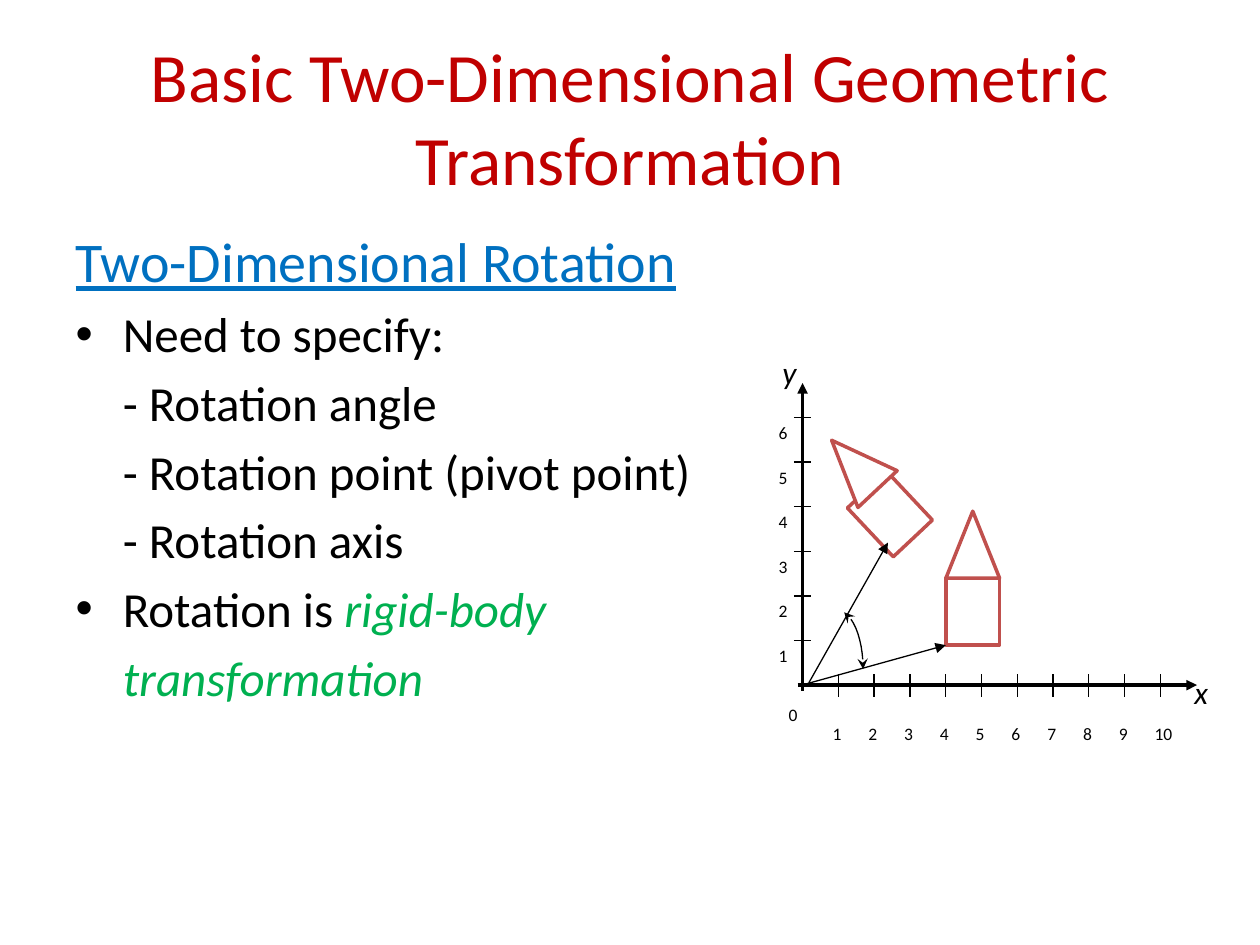
import pptx
import pptx.dml.color
import pptx.enum.shapes
import pptx.enum.text
import pptx.oxml.ns
import pptx.util
import lxml.etree

Pt = pptx.util.Pt
qn = pptx.oxml.ns.qn
Shape = pptx.enum.shapes.MSO_SHAPE
AutoSize = pptx.enum.text.MSO_AUTO_SIZE
Anchor = pptx.enum.text.MSO_ANCHOR
Align = pptx.enum.text.PP_ALIGN

COLORS = {"title": "C00000", "heading": "0070C0", "text": "000000",
          "accent": "00B050", "house": "C0504D", "paper": "FFFFFF"}
FORMATS = {
    "title": {"size": Pt(39.6), "color": "title"},
    "heading": {"size": Pt(32), "underline": True, "color": "heading"},
    "body": {"size": Pt(28), "color": "text"},
    "accent": {"size": Pt(28), "italic": True, "color": "accent"},
    "axis": {"size": Pt(18), "italic": True, "color": "text"},
    "number": {"size": Pt(10), "color": "text"},
}
# Each paragraph: bulleted or not, then its runs
BODY = [
    (False, [("Two-Dimensional Rotation", "heading")]),
    (True, [("Need to specify:", "body")]),
    (False, [("\t- Rotation angle", "body")]),
    (False, [("\t- Rotation point (pivot point)", "body")]),
    (False, [("\t- Rotation axis", "body")]),
    (True, [("Rotation is ", "body"), ("rigid-body", "accent")]),
    (False, [("\ttransformation", "accent")]),
]
ORIGIN_X, ORIGIN_Y = 458.6, 391.5
STEP_X, STEP_Y = 20.45, 25.5
HOUSE_WIDTH, HOUSE_HEIGHT = 30.7, 38.3


def rgb(name):
    return pptx.dml.color.RGBColor.from_string(COLORS[name])


def add_run(paragraph, text, style):
    run = paragraph.add_run()
    run.text = text
    run.font.name = "Calibri"
    for key, value in FORMATS[style].items():
        if key == "color":
            run.font.color.rgb = rgb(value)
        else:
            setattr(run.font, key, value)


def place(shape, left, top, width, height):
    box = {"left": left, "top": top, "width": width, "height": height}
    for key, value in box.items():
        setattr(shape, key, Pt(value))


def format_line(shape, color, width, **ends):
    shape.line.color.rgb = rgb(color)
    shape.line.width = Pt(width)
    line = shape.element.spPr.find(qn("a:ln"))
    for end, kind in ends.items():
        lxml.etree.SubElement(line, qn("a:" + end), type=kind)


def add_line(group, start, finish, width=0.75, **ends):
    points = [Pt(value) for value in (*start, *finish)]
    connector = group.shapes.add_connector(
        pptx.enum.shapes.MSO_CONNECTOR.STRAIGHT, *points)
    format_line(connector, "text", width, **ends)
    lxml.etree.SubElement(connector.element.spPr, qn("a:effectLst"))


def add_white_shape(group, kind, left, top, width, height):
    shape = group.shapes.add_shape(
        kind, *[Pt(value) for value in (left, top, width, height)])
    shape.shadow.inherit = False
    shape.fill.solid()
    shape.fill.fore_color.rgb = rgb("paper")
    return shape


def add_house_part(group, kind, left, top, rotation=0):
    part = add_white_shape(group, kind, left, top, HOUSE_WIDTH, HOUSE_HEIGHT)
    part.rotation = rotation
    format_line(part, "house", 2)


def add_axis_name(group, name, left, top):
    box = add_white_shape(group, Shape.RECTANGLE, left, top, 20, 33)
    box.line.fill.background()
    box.text_frame.vertical_anchor = Anchor.TOP
    paragraph = box.text_frame.paragraphs[0]
    paragraph.alignment = Align.LEFT
    add_run(paragraph, name, "axis")


def add_number(group, number, left, top):
    width = 25.2 if number > 9 else 20.2
    box = group.shapes.add_textbox(Pt(left), Pt(top), Pt(width), Pt(22.3))
    box.text_frame.word_wrap = False
    box.text_frame.auto_size = AutoSize.SHAPE_TO_FIT_TEXT
    add_run(box.text_frame.paragraphs[0], f" {number}", "number")


def add_angle_arc(group, curve, segments=10):
    points = []
    for step in range(segments + 1):
        t = step / segments
        weights = ((1 - t) ** 3, 3 * t * (1 - t) ** 2, 3 * t * t * (1 - t), t ** 3)
        points.append(tuple(
            Pt(sum(weight * point[axis] for weight, point in zip(weights, curve)))
            for axis in (0, 1)))
    builder = group.shapes.build_freeform(*points[0])
    builder.add_line_segments(points[1:], close=False)
    arc = builder.convert_to_shape()
    arc.shadow.inherit = False
    arc.fill.background()
    format_line(arc, "text", 0.75, headEnd="stealth", tailEnd="stealth")


def add_title(slide):
    title = slide.shapes.title
    place(title, 36, 21.6, 648, 90)
    frame = title.text_frame
    frame.auto_size = AutoSize.NONE
    frame.vertical_anchor = Anchor.MIDDLE
    frame.paragraphs[0].alignment = Align.CENTER
    add_run(frame.paragraphs[0],
            "Basic Two-Dimensional Geometric Transformation", "title")


def add_body(slide):
    body = slide.placeholders[1]
    place(body, 36, 126, 648, 396)
    frame = body.text_frame
    frame.auto_size = AutoSize.NONE
    for index, (bulleted, runs) in enumerate(BODY):
        paragraph = frame.add_paragraph() if index else frame.paragraphs[0]
        for text, style in runs:
            add_run(paragraph, text, style)
        if not bulleted:
            properties = paragraph._p.get_or_add_pPr()
            properties.set("marL", str(Pt(27)))
            properties.set("indent", str(-Pt(27)))
            lxml.etree.SubElement(properties, qn("a:buNone"))


def add_axes(group):
    add_axis_name(group, "y", 440, 198)
    add_axis_name(group, "x", 675.4, 381)
    add_line(group, (ORIGIN_X, 394.6), (ORIGIN_X, 218.9), 2, tailEnd="triangle")
    add_line(group, (455.8, ORIGIN_Y), (684, ORIGIN_Y), 2, tailEnd="triangle")
    add_number(group, 0, 443.5, 386.6)
    for number in range(1, 11):
        x = ORIGIN_X + number * STEP_X
        add_line(group, (x, 385.2), (x, 398.2))
        add_number(group, number, x - 10.4, 397.4)
    for number in range(1, 7):
        y = ORIGIN_Y - number * STEP_Y
        add_line(group, (453.6, y), (463.7, y))
        add_number(group, number, 437.8, y - 13)


def add_rotation(group):
    # House before rotation
    add_house_part(group, Shape.RECTANGLE, 540.5, 330.4)
    add_house_part(group, Shape.ISOSCELES_TRIANGLE, 540.5, 330.4 - HOUSE_HEIGHT)
    add_line(group, (458.2, ORIGIN_Y), (540.5, 368.7), tailEnd="triangle")
    # House after rotation
    add_house_part(group, Shape.RECTANGLE, 493.2, 274.6, 316.8)
    add_house_part(group, Shape.ISOSCELES_TRIANGLE, 473, 246.4, 316.8)
    add_line(group, (462.2, 390.2), (507.4, 310.1), tailEnd="triangle")
    # Rotation angle
    add_angle_arc(group, [(482.4, 349.9), (488.9, 354.2),
                          (493.2, 367.2), (493.2, 382.3)])


def main():
    presentation = pptx.Presentation()
    presentation.slide_width = Pt(720)
    presentation.slide_height = Pt(540)
    slide = presentation.slides.add_slide(presentation.slide_layouts[1])
    add_title(slide)
    add_body(slide)
    diagram = slide.shapes.add_group_shape()
    add_axes(diagram)
    add_rotation(diagram)
    presentation.save("out.pptx")


if __name__ == "__main__":
    main()
